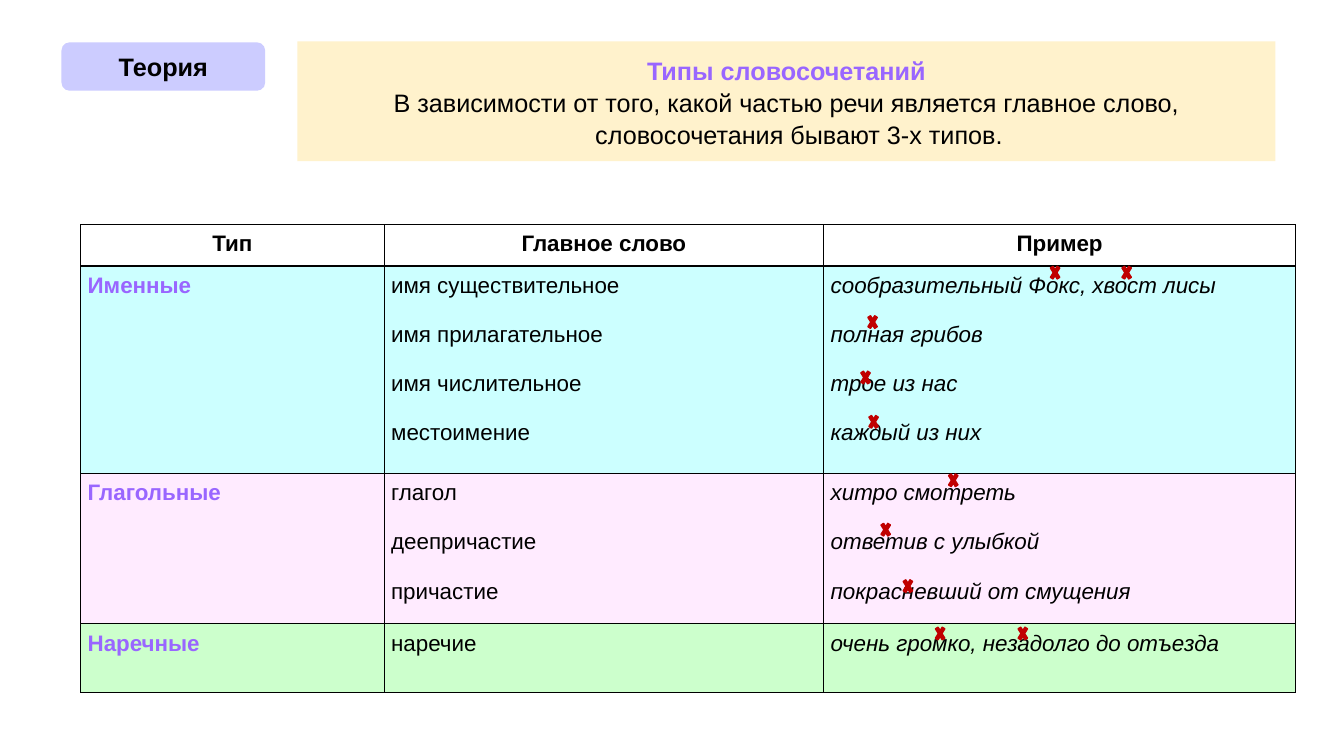
from collections import namedtuple

from lxml.etree import SubElement
from pptx import Presentation
from pptx.dml.color import RGBColor
from pptx.enum.shapes import MSO_SHAPE as Preset
from pptx.enum.text import MSO_ANCHOR as Anchor, MSO_AUTO_SIZE as AutoSize, PP_ALIGN as Align
from pptx.oxml.ns import qn
from pptx.util import Inches, Pt

BLACK = RGBColor(0, 0, 0)
VIOLET = RGBColor(0x99, 0x66, 0xFF)
LAVENDER = RGBColor(0xCC, 0xCC, 0xFF)
CREAM = RGBColor(0xFF, 0xF2, 0xCC)
CYAN = RGBColor(0xCC, 0xFF, 0xFF)
PINK = RGBColor(0xFF, 0xEB, 0xFF)
GREEN = RGBColor(0xCC, 0xFF, 0xCC)
RED = RGBColor(0xC0, 0, 0)

FONT = "Arial"
GRID = Inches(0.1)
LINE_PITCH = 4.95
Box = namedtuple("Box", "left top width height")
Example = namedtuple("Example", "head_word phrase marks")
Group = namedtuple("Group", "name fill height examples")

LABEL_BOX = Box(6.1, 4.2, 20.2, 4.8)
TITLE_BOX = Box(29.5, 4.1, 97, 11.9)
TABLE_BOX = Box(8, 22.3, 120.5, 46.4)
COLUMN_WIDTHS = (30.1, 43.6, 46.8)
HEADER_HEIGHT = 4.1
HEADINGS = ("Тип", "Главное слово", "Пример")
GROUPS = (
    Group("Именные", CYAN, 20.6, (
        Example("имя существительное", "сообразительный Фокс, хвост лисы",
                ((22.3, -0.4), (29.4, -0.4))),
        Example("имя прилагательное", "полная грибов", ((4.2, -0.45),)),
        Example("имя числительное", "трое из нас", ((3.5, 0.1),)),
        Example("местоимение", "каждый из них", ((4.3, -0.45),)),
    )),
    Group("Глагольные", PINK, 14.9, (
        Example("глагол", "хитро смотреть", ((12.2, -0.4),)),
        Example("деепричастие", "ответив с улыбкой", ((5.5, -0.45),)),
        Example("причастие", "покрасневший от смущения", ((7.7, 0.2),)),
    )),
    Group("Наречные", GREEN, 6.8, (
        Example("наречие", "очень громко, незадолго до отъезда",
                ((10.9, -0.1), (19.1, -0.1))),
    )),
)


def grid(length):
    return round(length * GRID)


def place(shape, box):
    shape.left, shape.top, shape.width, shape.height = map(grid, box)


def add_run(paragraph, text, size, color=BLACK, bold=False, italic=False):
    run = paragraph.add_run()
    run.text = text
    font = run.font
    font.name, font.size = FONT, Pt(size)
    font.bold, font.italic = bold, italic
    font.color.rgb = color


def add_preset(slide, preset, box, color):
    shape = slide.shapes.add_shape(preset, *map(grid, box))
    shape.shadow.inherit = False
    shape.fill.solid()
    shape.fill.fore_color.rgb = color
    shape.line.fill.background()
    return shape


def add_label(slide, box):
    label = add_preset(slide, Preset.ROUNDED_RECTANGLE, box, LAVENDER)
    label.text_frame.vertical_anchor = Anchor.MIDDLE
    paragraph = label.text_frame.paragraphs[0]
    paragraph.alignment = Align.CENTER
    add_run(paragraph, "Теория", 18, bold=True)


def fill_title(slide, box):
    title = slide.shapes.title
    place(title, box)
    title.fill.solid()
    title.fill.fore_color.rgb = CREAM
    frame = title.text_frame
    frame.auto_size = AutoSize.NONE
    frame.word_wrap = True
    frame.vertical_anchor = Anchor.MIDDLE
    heading, rule = frame.paragraphs[0], frame.add_paragraph()
    add_run(heading, "Типы словосочетаний", 18, VIOLET, bold=True)
    add_run(rule, "В зависимости от того, какой частью речи является главное слово, "
                  "словосочетания бывают 3-х типов.", 18)
    for paragraph in (heading, rule):
        paragraph.alignment = Align.CENTER
        paragraph.line_spacing = 1.07
        paragraph.space_before = Pt(0)
        properties = paragraph._p.get_or_add_pPr()
        properties.set("marL", str(Inches(0.25)))
        properties.set("indent", str(-Inches(0.25)))


def format_cell(cell, fill=None):
    cell.margin_left = cell.margin_right = grid(0.7)
    cell.margin_top = cell.margin_bottom = grid(0.7)
    properties = cell._tc.get_or_add_tcPr()
    for side in ("a:lnL", "a:lnR", "a:lnT", "a:lnB"):
        border = SubElement(properties, qn(side), w=str(Pt(1)))
        color = SubElement(SubElement(border, qn("a:solidFill")), qn("a:srgbClr"))
        color.set("val", str(BLACK))
    if fill is None:
        cell.fill.background()
    else:
        cell.fill.solid()
        cell.fill.fore_color.rgb = fill


def write_lines(cell, lines, **style):
    frame = cell.text_frame
    for index, line in enumerate(lines):
        paragraph = frame.add_paragraph() if index else frame.paragraphs[0]
        if index:
            paragraph.space_before = Pt(17.3)
        add_run(paragraph, line, 16, **style)


def add_types_table(slide, box):
    frame = slide.shapes.add_table(len(GROUPS) + 1, len(HEADINGS), *map(grid, box))
    table = frame.table
    table.first_row = table.horz_banding = False
    for column, width in zip(table.columns, COLUMN_WIDTHS):
        column.width = grid(width)
    heights = (HEADER_HEIGHT, *(group.height for group in GROUPS))
    for row, height in zip(table.rows, heights):
        row.height = grid(height)
    for cell, heading in zip(table.rows[0].cells, HEADINGS):
        format_cell(cell)
        write_lines(cell, [heading], bold=True)
        cell.text_frame.paragraphs[0].alignment = Align.CENTER
    for row, group in zip(list(table.rows)[1:], GROUPS):
        name, head_words, phrases = row.cells
        for cell in (name, head_words, phrases):
            format_cell(cell, group.fill)
        write_lines(name, [group.name], color=VIOLET, bold=True)
        write_lines(head_words, [example.head_word for example in group.examples])
        write_lines(phrases, [example.phrase for example in group.examples], italic=True)


def add_head_word_marks(slide, box):
    left = box.left + sum(COLUMN_WIDTHS[:2])
    top = box.top + HEADER_HEIGHT
    for group in GROUPS:
        for index, example in enumerate(group.examples):
            for across, down in example.marks:
                mark_box = Box(left + across, top + index * LINE_PITCH + down, 1.3, 2.1)
                mark = add_preset(slide, Preset.MATH_MULTIPLY, mark_box, RED)
                mark.line.color.rgb = RED
                mark.line.width = Pt(1)
        top += group.height


def main():
    presentation = Presentation()
    presentation.slide_width = Inches(13.33)
    presentation.slide_height = Inches(7.5)
    slide = presentation.slides.add_slide(presentation.slide_layouts[5])
    add_label(slide, LABEL_BOX)
    fill_title(slide, TITLE_BOX)
    add_types_table(slide, TABLE_BOX)
    add_head_word_marks(slide, TABLE_BOX)
    presentation.save("out.pptx")


if __name__ == "__main__":
    main()
